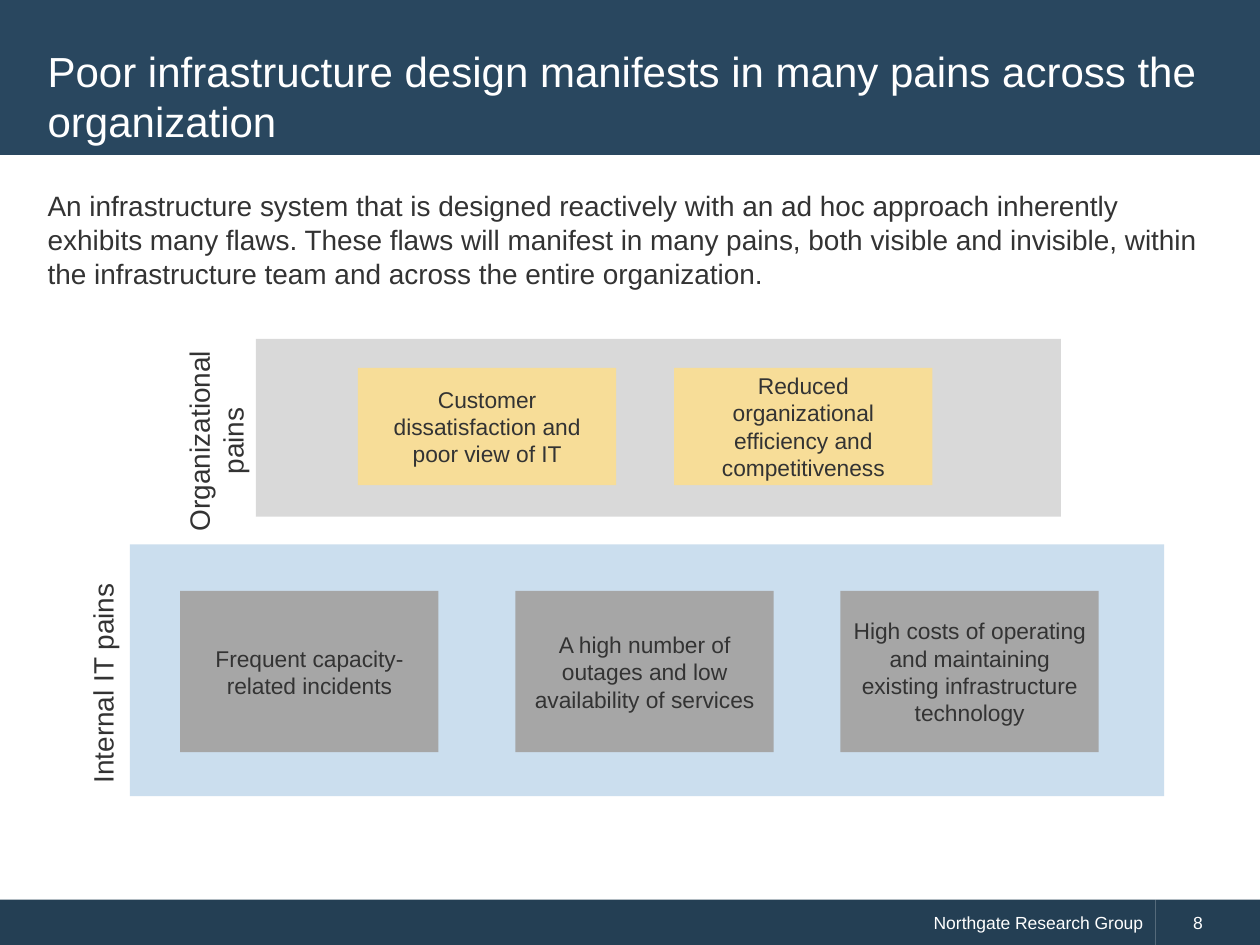
from dataclasses import dataclass

from pptx import Presentation
from pptx.dml.color import RGBColor
from pptx.enum.shapes import MSO_SHAPE as Shape
from pptx.enum.text import MSO_ANCHOR as Anchor, PP_ALIGN as Align
from pptx.util import Inches, Pt

# Grid: 100 columns by 75 rows on a 10 x 7.5 inch slide
WIDTH, HEIGHT = Inches(10), Inches(7.5)
COLS, ROWS = 100, 75
FONT, INK, WHITE = "Arial", "333333", "FFFFFF"
HEADER, FOOTER = "29475F", "243F54"
BOX_COLS = 20.5


@dataclass(frozen=True)
class Area:
    col: float
    row: float
    cols: float
    rows: float

    def emu(self) -> tuple[int, ...]:
        return (round(WIDTH * self.col / COLS), round(HEIGHT * self.row / ROWS),
                round(WIDTH * self.cols / COLS), round(HEIGHT * self.rows / ROWS))


@dataclass(frozen=True)
class Tier:
    """A band of pains with its sideways label."""
    label: str
    label_area: Area
    label_wraps: bool
    band: Area
    band_color: str
    box_color: str
    box_row: float
    box_rows: float
    pains: tuple[tuple[float, str], ...]  # left column and wording


TIERS = (
    Tier("Internal IT pains", Area(-0.9, 52.4, 18.1, 3.7), False,
         Area(10.3, 43.2, 82.1, 20), "CBDEEE", "A6A6A6", 46.9, 12.8,
         ((14.3, "Frequent capacity-related incidents"),
          (40.9, "A high number of outages and low availability of services"),
          (66.7, "High costs of operating and maintaining existing "
                 "infrastructure technology"))),
    Tier("Organizational pains", Area(8.9, 31.8, 16.5, 6.4), True,
         Area(20.3, 26.9, 63.9, 14.1), "D9D9D9", "F7DD98", 29.2, 9.3,
         ((28.4, "Customer dissatisfaction and poor view of IT"),
          (53.5, "Reduced organizational efficiency and competitiveness"))),
)


def rgb(color: str) -> RGBColor:
    return RGBColor.from_string(color)


def write(sp, text: str, size: float, color: str = INK,
          align=Align.LEFT, anchor=Anchor.TOP, wrap: bool = True) -> None:
    tf = sp.text_frame
    tf.word_wrap = wrap
    tf.vertical_anchor = anchor
    p = tf.paragraphs[0]
    p.text, p.alignment = text, align
    p.font.name, p.font.size = FONT, Pt(size)
    p.font.color.rgb = rgb(color)


def add_rect(s, area: Area, color: str):
    sp = s.shapes.add_shape(Shape.RECTANGLE, *area.emu())
    sp.shadow.inherit = False
    sp.fill.solid()
    sp.fill.fore_color.rgb = rgb(color)
    sp.line.fill.background()
    return sp


def add_text(s, area: Area, text: str, size: float, **style):
    sp = s.shapes.add_textbox(*area.emu())
    write(sp, text, size, **style)
    return sp


def add_tier(s, tier: Tier) -> None:
    add_rect(s, tier.band, tier.band_color)
    for col, pain in tier.pains:
        box = add_rect(s, Area(col, tier.box_row, BOX_COLS, tier.box_rows),
                       tier.box_color)
        write(box, pain, 13, align=Align.CENTER, anchor=Anchor.MIDDLE)
    label = add_text(s, tier.label_area, tier.label, 16,
                     align=Align.CENTER, wrap=tier.label_wraps)
    label.rotation = 270


def main() -> None:
    prs = Presentation()
    prs.slide_width, prs.slide_height = WIDTH, HEIGHT
    s = prs.slides.add_slide(prs.slide_layouts[6])

    # Footer with page number
    footer = add_rect(s, Area(0, 71.4, 91.7, 3.7), FOOTER)
    write(footer, "Northgate Research Group", 10, WHITE, Align.RIGHT, Anchor.MIDDLE)
    page = add_rect(s, Area(91.7, 71.4, 8.3, 3.7), FOOTER)
    write(page, "8", 10, WHITE, anchor=Anchor.MIDDLE)
    page.text_frame.margin_left = Inches(0.3)

    # Header and introduction
    add_rect(s, Area(0, 0, 100, 12.3), HEADER)
    add_text(s, Area(2.8, 2.8, 94.3, 9.6),
             "Poor infrastructure design manifests in many pains across the "
             "organization", 24, color=WHITE, anchor=Anchor.MIDDLE)
    add_text(s, Area(2.8, 14.5, 94.3, 9.1),
             "An infrastructure system that is designed reactively with an ad hoc "
             "approach inherently exhibits many flaws. These flaws will manifest in "
             "many pains, both visible and invisible, within the infrastructure team "
             "and across the entire organization.", 16)

    # Tiers of pains
    for tier in TIERS:
        add_tier(s, tier)

    prs.save("out.pptx")


if __name__ == "__main__":
    main()
